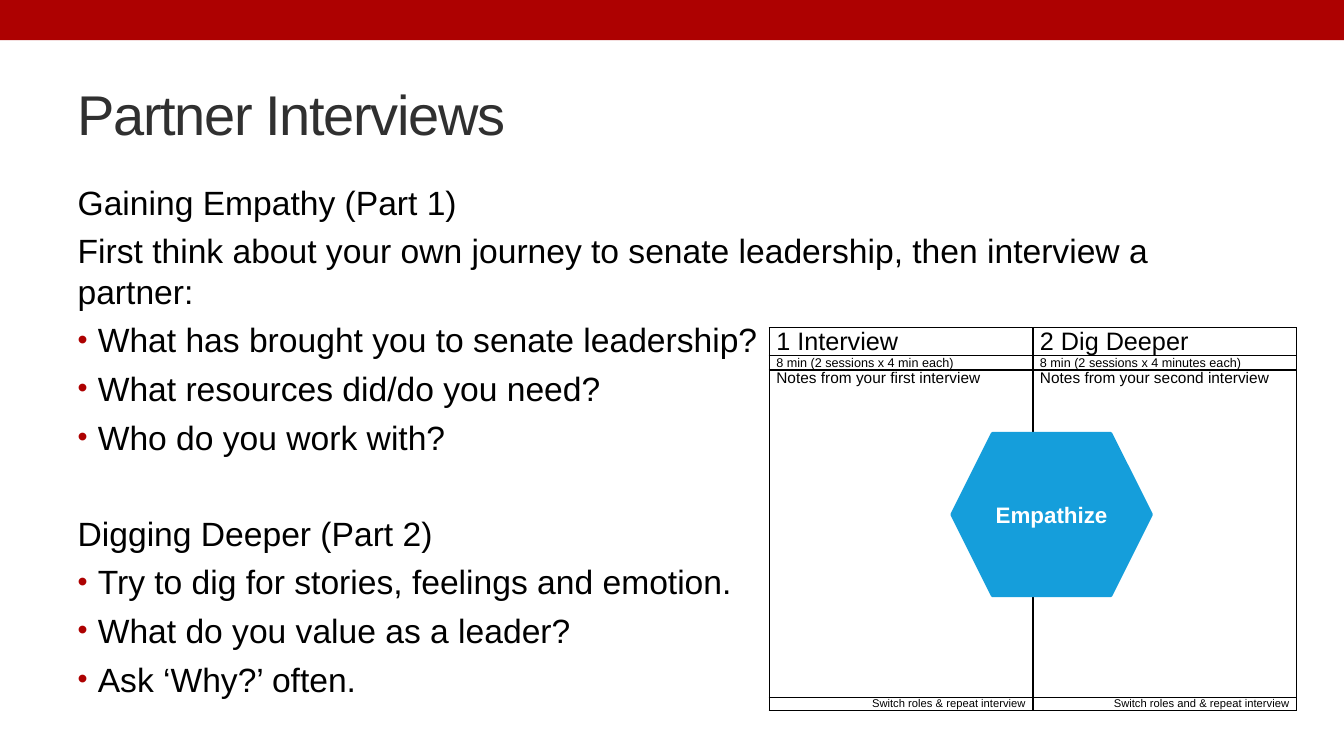
from lxml.etree import SubElement
from pptx import Presentation
from pptx.dml.color import RGBColor
from pptx.enum.shapes import MSO_SHAPE as Shape
from pptx.enum.text import MSO_ANCHOR as Anchor, MSO_AUTO_SIZE as AutoSize, PP_ALIGN as Align
from pptx.oxml.ns import qn
from pptx.util import Inches, Pt

RED, BLUE, GREY, BLACK, WHITE = "AD0101", "159EDB", "303030", "000000", "FFFFFF"

# Each section: plain lines, then bulleted questions
SECTIONS = [
    (["Gaining Empathy (Part 1)",
      "First think about your own journey to senate leadership, then interview a partner:"],
     ["What has brought you to senate leadership?",
      "What resources did/do you need?",
      "Who do you work with?"]),
    (["Digging Deeper (Part 2)"],
     ["Try to dig for stories, feelings and emotion.",
      "What do you value as a leader?",
      "Ask ‘Why?’ often."]),
]

# Worksheet rows: height, text size, alignment, cell texts
WORKSHEET = [
    (0.28, 18, Align.LEFT, ["1 Interview", "2 Dig Deeper"]),
    (0.14, 9, Align.LEFT, ["8 min (2 sessions x 4 min each)",
                           "8 min (2 sessions x 4 minutes each)"]),
    (3.25, 11, Align.LEFT, ["Notes from your first interview",
                            "Notes from your second interview"]),
    (0.13, 8, Align.RIGHT, ["Switch roles & repeat interview",
                            "Switch roles and & repeat interview"]),
]


def rgb(hex_colour):
    return RGBColor.from_string(hex_colour)


def place(shape, left, top, width, height):
    shape.left, shape.top = Inches(left), Inches(top)
    shape.width, shape.height = Inches(width), Inches(height)


class SlideBuilder:
    font = "Arial"
    line_gap = 6
    section_gap = 39.6

    def __init__(self, slide):
        self.slide = slide

    def add_text(self, paragraph, text, size, colour, bold=False):
        run = paragraph.add_run()
        run.text = text
        run.font.name, run.font.size, run.font.bold = self.font, Pt(size), bold
        run.font.color.rgb = rgb(colour)
        return run

    def title(self, text, *box):
        heading = self.slide.shapes.title
        place(heading, *box)
        frame = heading.text_frame
        frame.vertical_anchor, frame.auto_size = Anchor.MIDDLE, AutoSize.NONE
        paragraph = frame.paragraphs[0]
        paragraph.alignment = Align.LEFT
        run = self.add_text(paragraph, text, 40, GREY)
        run.font._element.set("spc", "-100")

    def bullet(self, paragraph, shown):
        """Show or suppress the placeholder's bullet and set its indent."""
        props = paragraph._p.get_or_add_pPr()
        indent = Inches(0.2) if shown else 0
        props.set("marL", str(indent))
        props.set("indent", str(-indent))
        if shown:
            colour = SubElement(props, qn("a:buClr"))
            SubElement(colour, qn("a:srgbClr"), val=RED)
            SubElement(props, qn("a:buSzPct"), val="85000")
            SubElement(props, qn("a:buFont"), typeface=self.font)
            SubElement(props, qn("a:buChar"), char="•")
        else:
            SubElement(props, qn("a:buNone"))

    def body(self, sections, *box):
        guide = self.slide.placeholders[1]
        place(guide, *box)
        frame = guide.text_frame
        frame.word_wrap, frame.auto_size = True, AutoSize.NONE
        paragraph = None
        for intro, questions in sections:
            for index, text in enumerate(intro + questions):
                if paragraph is None:
                    paragraph, gap = frame.paragraphs[0], 0
                else:
                    paragraph = frame.add_paragraph()
                    gap = self.line_gap if index else self.section_gap
                self.bullet(paragraph, index >= len(intro))
                paragraph.space_before = Pt(gap)
                self.add_text(paragraph, text, 24, BLACK)

    def shape(self, kind, fill, *box):
        figure = self.slide.shapes.add_shape(kind, *map(Inches, box))
        figure.shadow.inherit = False
        figure.fill.solid()
        figure.fill.fore_color.rgb = rgb(fill)
        figure.line.fill.background()
        return figure

    def hexagon(self, text, *box):
        stage = self.shape(Shape.HEXAGON, BLUE, *box)
        stage.line.color.rgb = rgb(BLUE)
        stage.line.width = Pt(2.08)
        SubElement(stage.line._get_or_add_ln(), qn("a:round"))
        stage.text_frame.vertical_anchor = Anchor.MIDDLE
        paragraph = stage.text_frame.paragraphs[0]
        paragraph.alignment = Align.CENTER
        self.add_text(paragraph, text, 16, WHITE, bold=True)

    def border(self, cell):
        props = cell._tc.get_or_add_tcPr()
        for side in ("lnL", "lnR", "lnT", "lnB"):
            line = SubElement(props, qn(f"a:{side}"), w=str(Pt(1)))
            SubElement(SubElement(line, qn("a:solidFill")), qn("a:srgbClr"), val=BLACK)

    def table(self, rows, left, top, width):
        height = sum(row[0] for row in rows)
        box = map(Inches, (left, top, width, height))
        grid = self.slide.shapes.add_table(len(rows), len(rows[0][3]), *box).table
        grid.first_row = grid.horz_banding = False
        for r, (row_height, size, alignment, texts) in enumerate(rows):
            grid.rows[r].height = Inches(row_height)
            for c, text in enumerate(texts):
                cell = grid.cell(r, c)
                cell.margin_left = cell.margin_right = Inches(0.07)
                cell.margin_top = cell.margin_bottom = 0
                self.border(cell)
                cell.fill.background()
                paragraph = cell.text_frame.paragraphs[0]
                paragraph.alignment = alignment
                self.add_text(paragraph, text, size, BLACK)


def main():
    deck = Presentation()
    deck.slide_width, deck.slide_height = Inches(13.33), Inches(7.5)
    builder = SlideBuilder(deck.slides.add_slide(deck.slide_layouts[1]))
    builder.shape(Shape.RECTANGLE, RED, 0, 0, 13.33, 0.4)
    builder.title("Partner Interviews", 0.67, 0.58, 12, 1.08)
    builder.body(SECTIONS, 0.67, 1.75, 11.35, 5.33)
    builder.table(WORKSHEET, 7.63, 3.25, 5.23)
    builder.hexagon("Empathize", 9.44, 4.3, 1.98, 1.61)
    deck.save("out.pptx")


if __name__ == "__main__":
    main()
